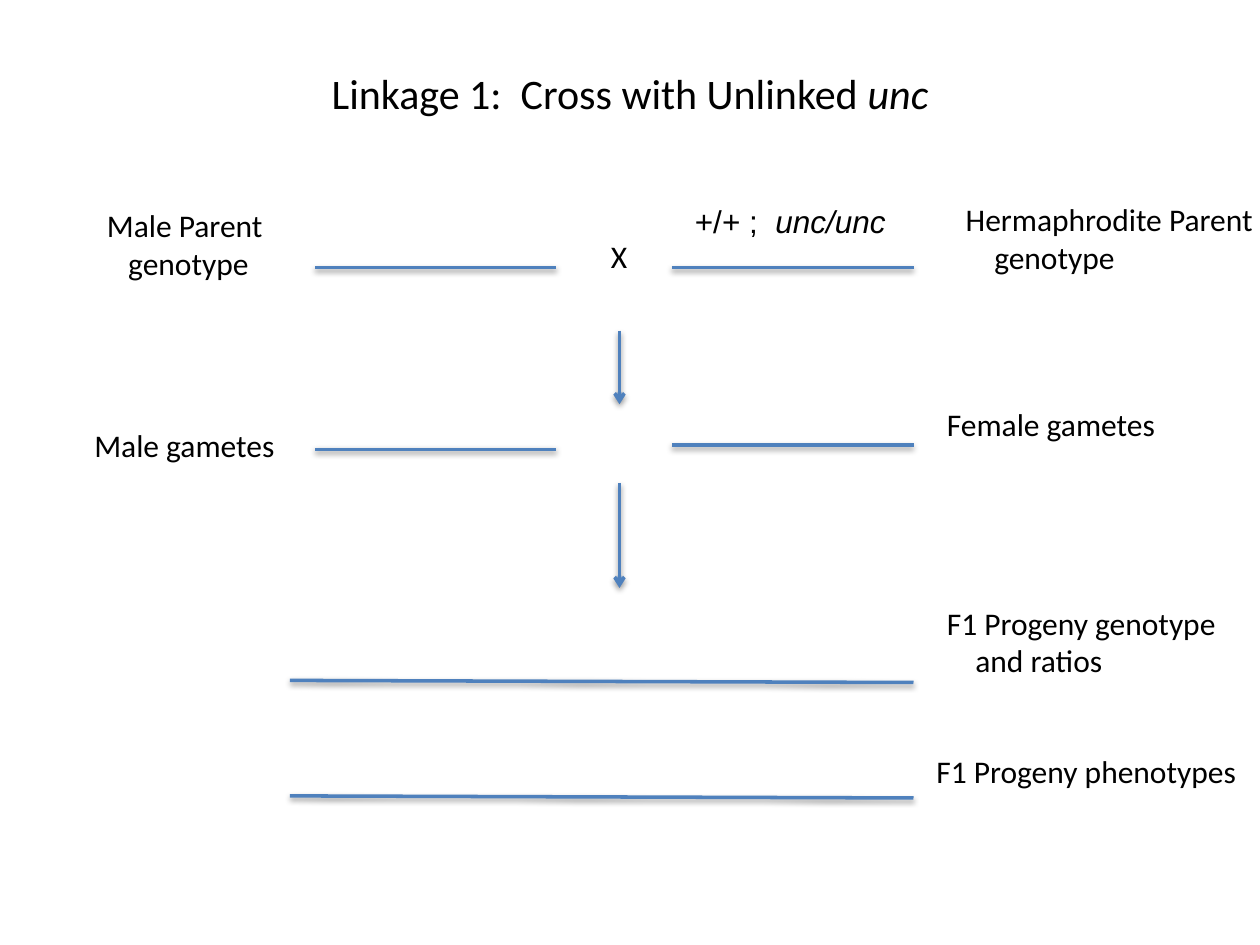
import pptx
import pptx.util
import pptx.dml.color
import pptx.enum.shapes
import pptx.enum.text
import pptx.oxml
import pptx.oxml.ns

COLORS = {"text": "000000", "line": "4F81BD", "shadow": "000000"}

# Slide grid: 120 columns by 90 rows
W, H = 10, 7.5
COLS, ROWS = 120, 90

# Content: runs are (text, italic)
TITLE = [("Linkage 1:  Cross with Unlinked ", False), ("unc", True)]
GENOTYPE = [("+/+ ;  ", False), ("unc/unc", True)]

# Labels: column, row, width in columns, lines, indent of second line in points
LABELS = [
    (90.8, 18.5, 30, ["Hermaphrodite Parent", "genotype"], 16.3),
    (9, 19, 17.4, ["Male Parent", "genotype"], 12.2),
    (57, 22, 4, ["X"], 0),
    (7.8, 40, 19.8, ["Male gametes"], 0),
    (89, 38, 22.4, ["Female gametes"], 0),
    (89, 56.9, 28.3, ["F1 Progeny genotype", "and ratios"], 16.3),
    (88, 71, 31.3, ["F1 Progeny phenotypes"], 0),
]

# Answer lines and arrows: start and end on the grid
MALE, FEMALE, PROGENY, CENTER = (30, 53), (64, 87), (27.6, 87), (59, 59)
BLANKS = [
    (MALE, (25.5, 25.5)), (FEMALE, (25.5, 25.5)),
    (MALE, (42.8, 42.8)), (FEMALE, (42.4, 42.4)),
    (PROGENY, (64.8, 65)), (PROGENY, (75.8, 76)),
]
ARROWS = [(CENTER, (31.5, 38.5)), (CENTER, (46, 56))]

SHADOW = (
    f'<a:effectLst {pptx.oxml.ns.nsdecls("a")}>'
    '<a:outerShdw blurRad="40000" dist="20000" dir="5400000" rotWithShape="0">'
    f'<a:srgbClr val="{COLORS["shadow"]}"><a:alpha val="38000"/></a:srgbClr>'
    '</a:outerShdw></a:effectLst>'
)


def x(col):
    return pptx.util.Inches(W * col / COLS)


def y(row):
    return pptx.util.Inches(H * row / ROWS)


def color(name):
    return pptx.dml.color.RGBColor.from_string(COLORS[name])


def add_text(s, paragraphs, col, row, cols, rows, size=18, font="Calibri",
             indent=0, title=False):
    tf = s.shapes.add_textbox(x(col), y(row), x(cols), y(rows)).text_frame
    tf.word_wrap = title
    if title:
        tf.vertical_anchor = pptx.enum.text.MSO_ANCHOR.MIDDLE
    else:
        tf.auto_size = pptx.enum.text.MSO_AUTO_SIZE.SHAPE_TO_FIT_TEXT
    for i, runs in enumerate(paragraphs):
        p = tf.add_paragraph() if i else tf.paragraphs[0]
        if title:
            p.alignment = pptx.enum.text.PP_ALIGN.CENTER
        if i and indent:
            p._p.get_or_add_pPr().set("marL", str(int(pptx.util.Pt(indent))))
        for text, italic in runs:
            r = p.add_run()
            r.text = text
            r.font.name, r.font.size = font, pptx.util.Pt(size)
            r.font.italic = italic or None
            r.font.color.rgb = color("text")


def add_line(s, cols, rows, arrow=False):
    c = s.shapes.add_connector(pptx.enum.shapes.MSO_CONNECTOR.STRAIGHT,
                               x(cols[0]), y(rows[0]), x(cols[1]), y(rows[1]))
    c.line.color.rgb = color("line")
    c.line.width = pptx.util.Pt(2)
    if arrow:
        c.line._get_or_add_ln().append(pptx.oxml.parse_xml(
            f'<a:tailEnd {pptx.oxml.ns.nsdecls("a")} type="arrow"/>'))
    c._element.spPr.append(pptx.oxml.parse_xml(SHADOW))


def main():
    prs = pptx.Presentation()
    prs.slide_width, prs.slide_height = x(COLS), y(ROWS)
    s = prs.slides.add_slide(prs.slide_layouts[6])

    # Title
    add_text(s, [TITLE], 6, 3.6, 108, 10.4, size=24, title=True)

    # Labels and the given genotype
    for col, row, cols, lines, indent in LABELS:
        add_text(s, [[(line, False)] for line in lines], col, row, cols,
                 1.2 + 3.65 * len(lines), indent=indent)
    add_text(s, [GENOTYPE], 65, 18.7, 20.8, 4.8, font="Arial")

    # Answer lines and arrows
    for cols, rows in BLANKS:
        add_line(s, cols, rows)
    for cols, rows in ARROWS:
        add_line(s, cols, rows, arrow=True)

    prs.save("out.pptx")


if __name__ == "__main__":
    main()
